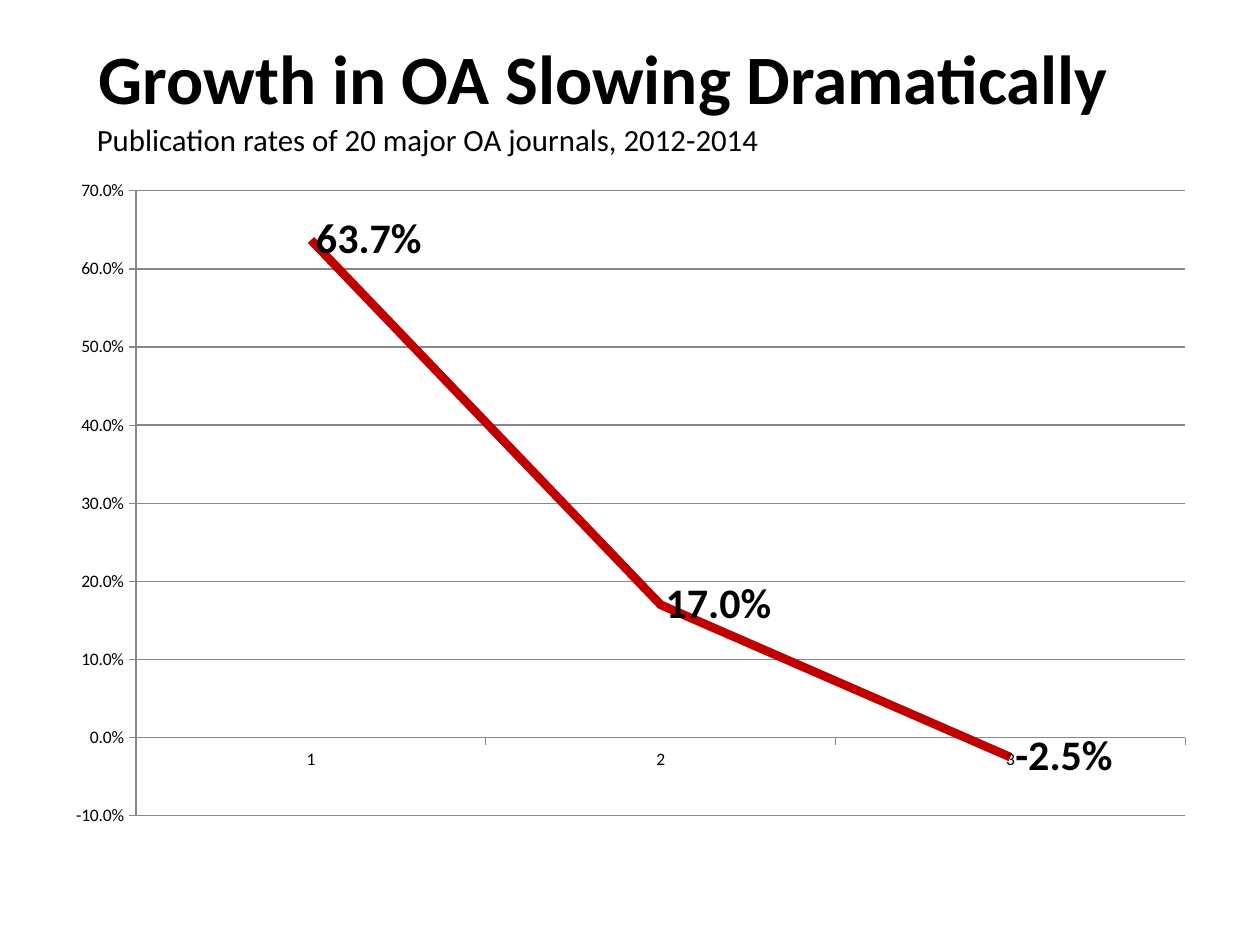
from lxml import etree
from pptx import Presentation
from pptx.chart.data import CategoryChartData
from pptx.dml.color import RGBColor
from pptx.enum import chart as ch, text
from pptx.util import Inches, Pt

FONT = "Calibri"


def color(code):
    return RGBColor.from_string(code)


def style(font, size, bold=False):
    font.name, font.size, font.bold = FONT, Pt(size), bold
    font.color.rgb = color("000000")


def place(shape, box):
    shape.left, shape.top, shape.width, shape.height = map(Inches, box)


def add_title(slide, box, words):
    title = slide.shapes.title
    place(title, box)
    frame = title.text_frame
    frame.text = words
    frame.vertical_anchor = text.MSO_ANCHOR.MIDDLE
    frame.paragraphs[0].alignment = text.PP_ALIGN.CENTER
    style(frame.paragraphs[0].font, 39.6, True)


def add_subtitle(slide, box, words):
    frame = slide.shapes.add_textbox(*map(Inches, box)).text_frame
    frame.word_wrap = True
    frame.text = words
    line = frame.paragraphs[0]
    line.space_before = Pt(3.5)
    style(line.font, 17.6)


def add_growth(slide, box, rates):
    """Line chart of yearly growth rates, with value labels."""
    data = CategoryChartData(number_format="0.0%")
    data.categories = [str(n + 1) for n in range(len(rates))]
    data.add_series("Series 1", rates)
    chart = slide.shapes.add_chart(
        ch.XL_CHART_TYPE.LINE, *map(Inches, box), data).chart
    chart.has_legend = chart.has_title = False
    style(chart.font, 10)

    for axis in (chart.category_axis, chart.value_axis):
        axis.major_tick_mark = ch.XL_TICK_MARK.OUTSIDE
        axis.format.line.color.rgb = color("878787")
        axis.format.line.width = Pt(0.75)
    rate = chart.value_axis
    rate.minimum_scale, rate.maximum_scale, rate.major_unit = -0.1, 0.7, 0.1
    rate.tick_labels.number_format = "0.0%"
    rate.tick_labels.number_format_is_linked = False
    grid = rate.major_gridlines.format.line
    grid.color.rgb = color("878787")
    grid.width = Pt(0.75)

    series = chart.plots[0].series[0]
    series.smooth = False
    series.marker.style = ch.XL_MARKER_STYLE.NONE
    series.format.line.color.rgb = color("C00000")
    series.format.line.width = Pt(5)
    labels = series.data_labels
    labels.show_value = True
    labels.number_format = "0.0%"
    labels.number_format_is_linked = False
    labels.position = ch.XL_LABEL_POSITION.RIGHT
    style(labels.font, 24, True)


def main():
    deck = Presentation()
    deck.slide_width, deck.slide_height = Inches(10), Inches(7.5)
    slide = deck.slides.add_slide(deck.slide_layouts[5])
    add_title(slide, (0, 0.39, 9.58, 0.44), "Growth in OA Slowing Dramatically")
    add_subtitle(slide, (0.67, 0.91, 6.14, 0.43),
                 "Publication rates of 20 major OA journals, 2012-2014")
    add_growth(slide, (0.42, 1.33, 9.17, 5.33), (0.637, 0.17, -0.025))
    deck.save("out.pptx")


if __name__ == "__main__":
    main()
